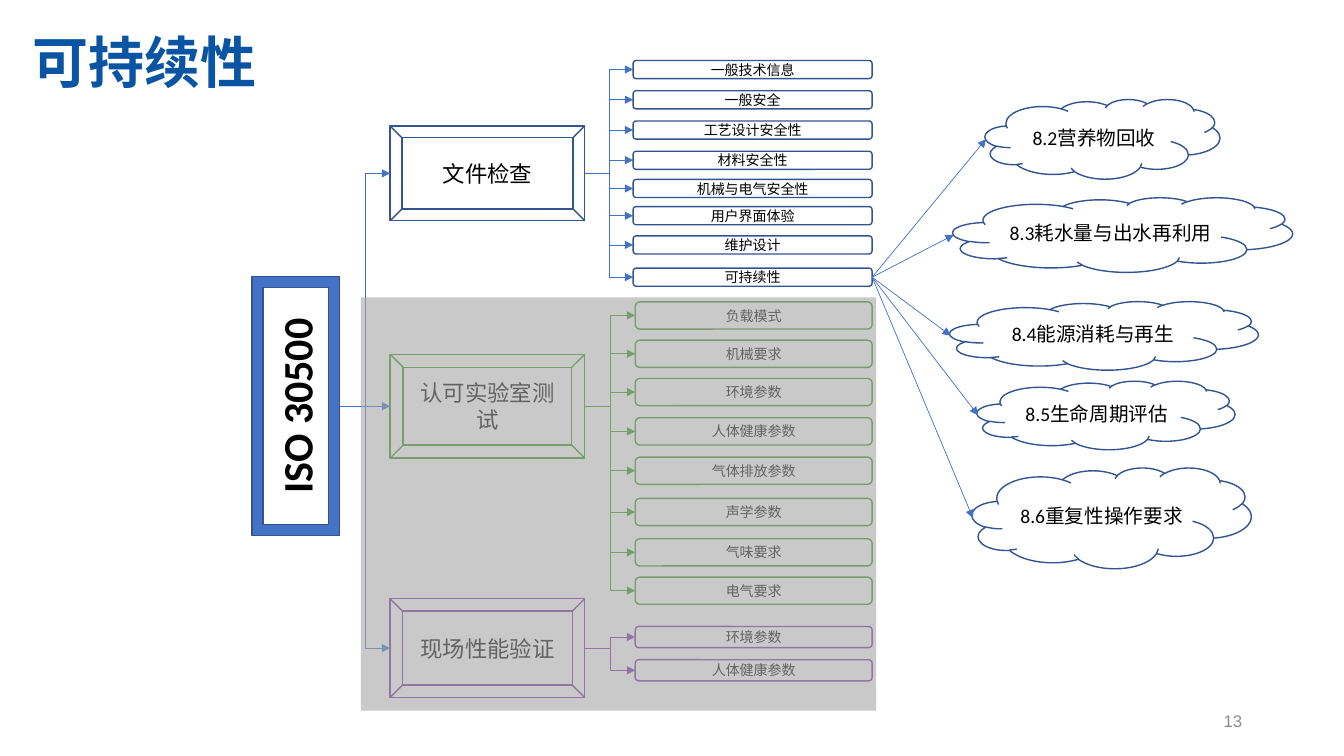
"""Build the ISO 30500 sustainability tree slide."""
from lxml.etree import SubElement
from pptx import Presentation
from pptx.dml.color import RGBColor
from pptx.enum.shapes import MSO_CONNECTOR as LINK, MSO_SHAPE as SHAPE
from pptx.enum.text import MSO_ANCHOR, MSO_AUTO_SIZE, PP_ALIGN
from pptx.oxml.ns import qn
from pptx.util import Inches, Pt

CELL = Inches(0.1)
BLUE, NAVY, GREEN, PURPLE = "4472C4", "325491", "36941C", "7030A0"
rgb = RGBColor.from_string

deck = Presentation()
deck.slide_width, deck.slide_height = Inches(13.33), Inches(7.5)
slide = deck.slides.add_slide(deck.slide_layouts[5])


def add_box(kind, left, middle, width, height, line, text="", size=10, fill=None):
    """Draw an outlined box, in grid cells, centred on the row called middle."""
    box = slide.shapes.add_shape(
        kind, *(int(n * CELL) for n in (left, middle - height / 2, width, height)))
    box.shadow.inherit = False
    if fill:
        box.fill.solid()
        box.fill.fore_color.rgb = rgb(fill)
    else:
        box.fill.background()
    if line:
        box.line.color.rgb = rgb(line)
        box.line.width = Pt(1)
    else:
        box.line.fill.background()
    if text:
        label = box.text_frame.paragraphs[0]
        label.text = text
        label.alignment = PP_ALIGN.CENTER
        label.font.size = Pt(size)
        label.font.name = "Calibri"
        label.font.color.rgb = rgb("000000")
    return box


def add_arrow(kind, start_column, start_row, end_column, end_row, color):
    """Draw a thin arrow between two grid points."""
    arrow = slide.shapes.add_connector(
        kind, *(int(n * CELL) for n in (start_column, start_row, end_column, end_row)))
    arrow.line.color.rgb = rgb(color)
    arrow.line.width = Pt(0.5)
    properties = arrow.element.spPr
    SubElement(properties.find(qn("a:ln")), qn("a:tailEnd"), type="triangle")
    SubElement(properties, qn("a:effectLst"))
    return arrow


title = slide.shapes.title
title.left, title.top = int(3.2 * CELL), int(1.5 * CELL)
title.width, title.height = int(122.4 * CELL), int(9.9 * CELL)
heading = title.text_frame
heading.text = "可持续性"
heading.auto_size = MSO_AUTO_SIZE.NONE
heading.vertical_anchor = MSO_ANCHOR.MIDDLE
heading.margin_left = heading.margin_right = heading.margin_top = heading.margin_bottom = 0
topic = heading.paragraphs[0]
topic.alignment = PP_ALIGN.LEFT
topic.line_spacing = 0.9
topic.font.size = Pt(40)
topic.font.name = "Arial"
topic.font.bold = True
topic.font.color.rgb = rgb("0A55A3")

root_row, root_right = 40.3, 33.7
branch_left, branch_width = 38.7, 19.3
branch_right = branch_left + branch_width
item_right = 86.5

standard = add_box(SHAPE.FRAME, 25, root_row, 8.7, 25.7, NAVY, "ISO 30500", 30, BLUE)
standard.text_frame.paragraphs[0].font.bold = True
standard.element.txBody.bodyPr.set("vert", "vert270")

branches = [
    ("文件检查", 17.2, 9.4, NAVY, BLUE, 62.8, 1.8, [
        ("一般技术信息", 6.9), ("一般安全", 9.9), ("工艺设计安全性", 12.9),
        ("材料安全性", 15.9), ("机械与电气安全性", 18.7), ("用户界面体验", 21.4),
        ("维护设计", 24.3), ("可持续性", 27.5)]),
    ("认可实验室测试", 40.3, 10.3, GREEN, GREEN, 63, 2.7, [
        ("负载模式", 31.3), ("机械要求", 35.1), ("环境参数", 38.9),
        ("人体健康参数", 42.8), ("气体排放参数", 46.7), ("声学参数", 50.8),
        ("气味要求", 54.8), ("电气要求", 58.6)]),
    ("现场性能验证", 64.3, 9.8, PURPLE, PURPLE, 63, 2.1, [
        ("环境参数", 63.2), ("人体健康参数", 66.5)]),
]
items = {}
for branch, row, height, outline, arrow_color, item_left, item_height, checks in branches:
    add_box(SHAPE.BEVEL, branch_left, row, branch_width, height, outline, branch, 16)
    add_arrow(LINK.ELBOW, root_right, root_row, branch_left, row, BLUE)
    for check, check_row in checks:
        add_arrow(LINK.ELBOW, branch_right, row, item_left, check_row, arrow_color)
        items[check] = add_box(SHAPE.ROUNDED_RECTANGLE, item_left, check_row,
                               item_right - item_left, item_height, outline, check)

clauses = [
    ("8.2营养物回收", 97.7, 13.8, 23.3, 7.9),
    ("8.3耗水量与出水再利用", 94.5, 23.3, 33.7, 7.4),
    ("8.4能源消耗与再生", 94.2, 33.3, 30.6, 6.8),
    ("8.5生命周期评估", 96.9, 41.2, 25.6, 6.8),
    ("8.6重复性操作要求", 96.4, 51.4, 27.7, 10),
]
for clause, left, row, width, height in clauses:
    add_box(SHAPE.CLOUD, left, row, width, height, NAVY, clause, 14)
    ray = add_arrow(LINK.STRAIGHT, item_right, 27.5, left + 0.1, row, BLUE)
    ray.begin_connect(items["可持续性"], 3)

page = slide.shapes.add_textbox(*(int(n * CELL) for n in (94.2, 69.5, 30, 4))).text_frame
page.word_wrap = True
page.vertical_anchor = MSO_ANCHOR.MIDDLE
number = page.paragraphs[0]
number.text = "13"
number.alignment = PP_ALIGN.RIGHT
number.font.size = Pt(12)
number.font.name = "Arial"
number.font.color.rgb = rgb("8C8C8C")

veil = add_box(SHAPE.RECTANGLE, 35.8, 50, 51.1, 41, None, fill="A5A5A5")
tint = veil.element.spPr.find(qn("a:solidFill")).find(qn("a:srgbClr"))
SubElement(tint, qn("a:alpha"), val="60000")

deck.save("out.pptx")
